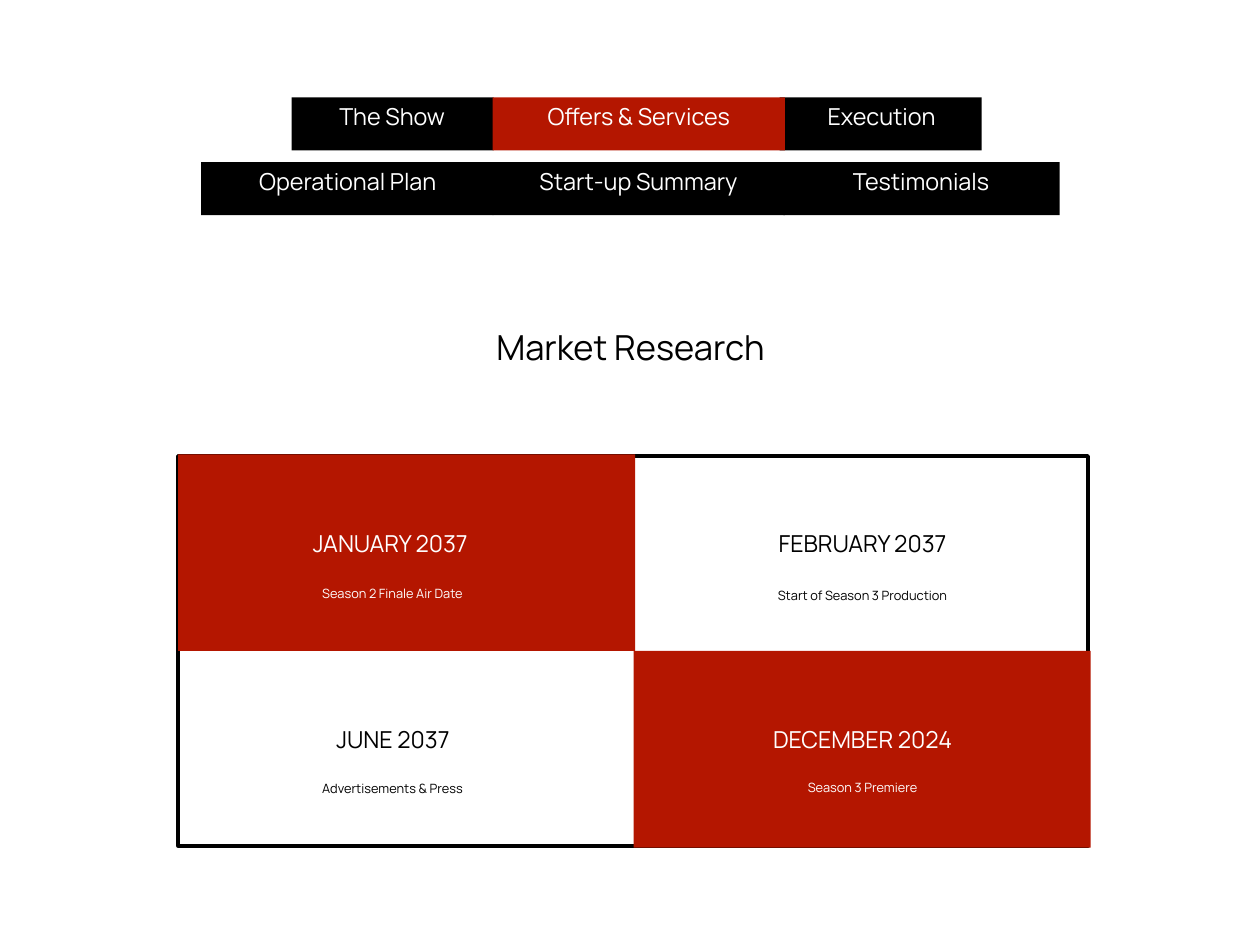
from pptx import Presentation
from pptx.dml.color import RGBColor
from pptx.enum.shapes import MSO_SHAPE
from pptx.enum.text import MSO_ANCHOR, PP_ALIGN
from pptx.util import Inches, Pt

BLACK = RGBColor(0x00, 0x00, 0x00)
WHITE = RGBColor(0xFF, 0xFF, 0xFF)
RED = RGBColor(0xB4, 0x16, 0x00)


def write_text(paragraph, text, font="Manrope", size=19, color=BLACK,
               line_spacing=None, raised=False):
    """Add one formatted, centred run to a paragraph."""
    paragraph.alignment = PP_ALIGN.CENTER
    if line_spacing:
        paragraph.line_spacing = line_spacing
    run = paragraph.add_run()
    run.text = text
    run.font.name = font
    run.font.size = Pt(size)
    run.font.color.rgb = color
    if raised:
        run._r.get_or_add_rPr().set("baseline", "30000")


class SlideBuilder:
    """Holds the current slide and the shared style."""

    inset = Inches(0.03)

    def __init__(self, slide):
        self.slide = slide

    def rectangle(self, left, top, width, height, fill=None, line=None):
        shape = self.slide.shapes.add_shape(
            MSO_SHAPE.RECTANGLE, Inches(left), Inches(top),
            Inches(width), Inches(height))
        shape.shadow.inherit = False
        if fill is None:
            shape.fill.background()
        else:
            shape.fill.solid()
            shape.fill.fore_color.rgb = fill
        if line is None:
            shape.line.fill.background()
        else:
            shape.line.color.rgb = line
            shape.line.width = Pt(3)

    def label(self, text, left, top, width, height=0.59, **text_format):
        box = self.slide.shapes.add_textbox(
            Inches(left), Inches(top), Inches(width), Inches(height))
        frame = box.text_frame
        frame.word_wrap = True
        frame.vertical_anchor = MSO_ANCHOR.MIDDLE
        frame.margin_left = frame.margin_right = self.inset
        frame.margin_top = frame.margin_bottom = self.inset
        write_text(frame.paragraphs[0], text, **text_format)


# Tabs: top, left, width, fill, text, text left, text width
TABS = [
    (1.83, 2.27, 3.3, BLACK, "Operational Plan", 2.6, 2.65),
    (1.83, 8.84, 3.12, BLACK, "Testimonials", 9.07, 2.65),
    (1.83, 5.56, 3.3, BLACK, "Start-up Summary", 5.88, 2.65),
    (1.1, 3.29, 2.28, BLACK, "The Show", 3.62, 1.61),
    (1.1, 8.8, 2.28, BLACK, "Execution", 9.09, 1.72),
    (1.1, 5.56, 3.3, RED, "Offers & Services", 5.79, 2.84),
]

# Milestones: date, date left, date top, event, event left, event top, event width, color
MILESTONES = [
    ("JANUARY 2037", 3.08, 5.63, "Season 2 Finale Air Date", 3.29, 6.6, 2.28, WHITE),
    ("FEBRUARY 2037", 8.41, 5.63, "Start of Season 3 Production", 8.46, 6.62, 2.55, BLACK),
    ("JUNE 2037", 3.11, 7.84, "Advertisements & Press", 3.29, 8.81, 2.28, BLACK),
    ("DECEMBER 2024", 8.41, 7.84, "Season 3 Premiere", 8.46, 8.79, 2.55, WHITE),
]


def main():
    presentation = Presentation()
    presentation.slide_width = Inches(14.22)
    presentation.slide_height = Inches(10.67)
    slide = presentation.slides.add_slide(presentation.slide_layouts[6])
    builder = SlideBuilder(slide)

    # Navigation tabs
    for top, left, width, fill, text, text_left, text_width in TABS:
        builder.rectangle(left, top, width, 0.6, fill=fill)
        builder.label(text, text_left, top - 0.08, text_width, color=WHITE)

    # Title
    builder.label("Market Research", 5.44, 3.62, 3.35, 0.6, size=28)

    # Milestone frame and its two red quarters
    builder.rectangle(2.01, 5.15, 10.27, 4.4, line=BLACK)
    for left, top in [(2.01, 5.13), (7.15, 7.35)]:
        builder.rectangle(left, top, 5.16, 2.22, fill=RED)

    # Milestone texts
    for date, date_left, date_top, event, left, top, width, color in MILESTONES:
        builder.label(date, date_left, date_top, 2.65, color=color, line_spacing=2.32)
        builder.label(event, left, top, width, 0.26, size=18, color=color, raised=True)

    presentation.save("out.pptx")


if __name__ == "__main__":
    main()
